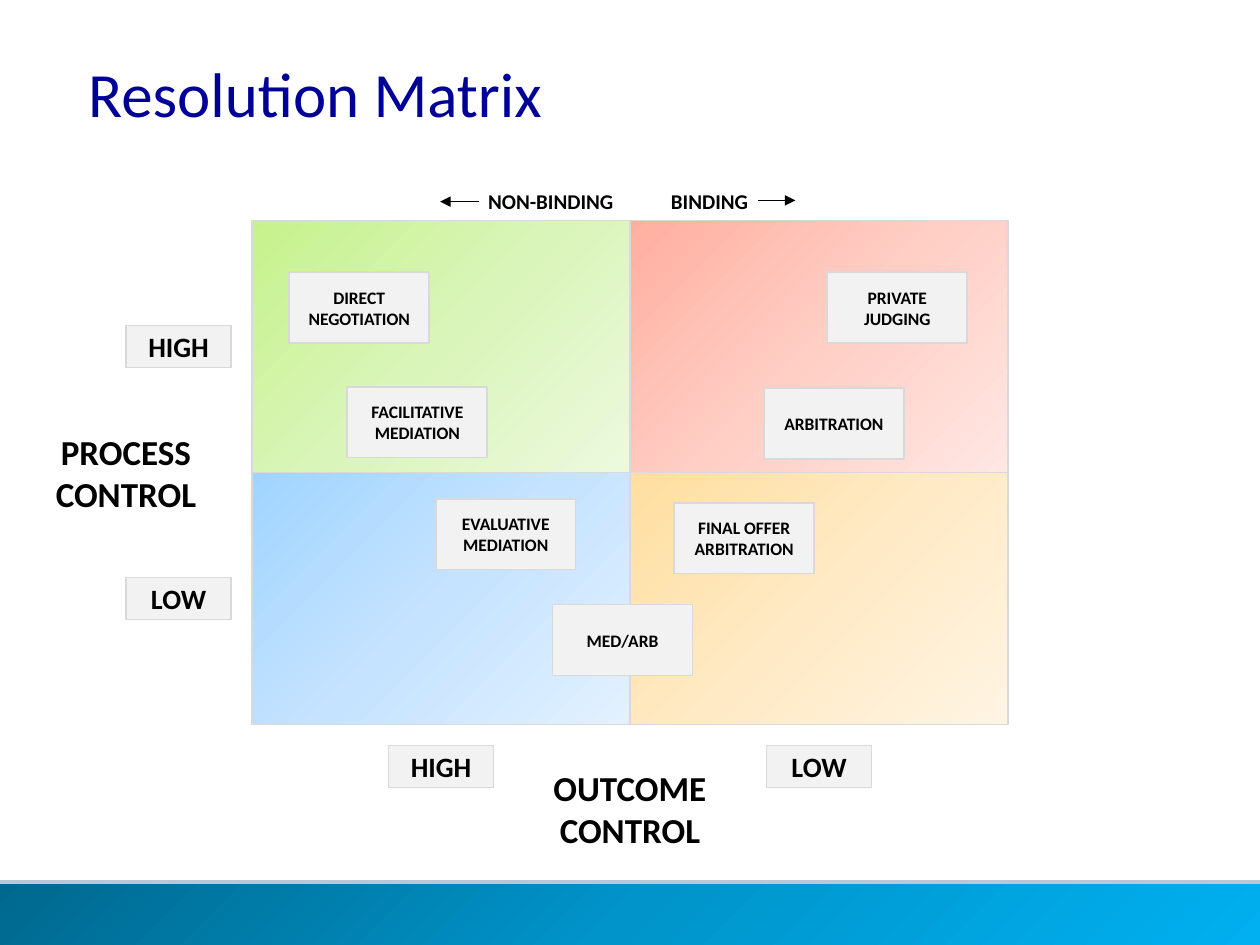
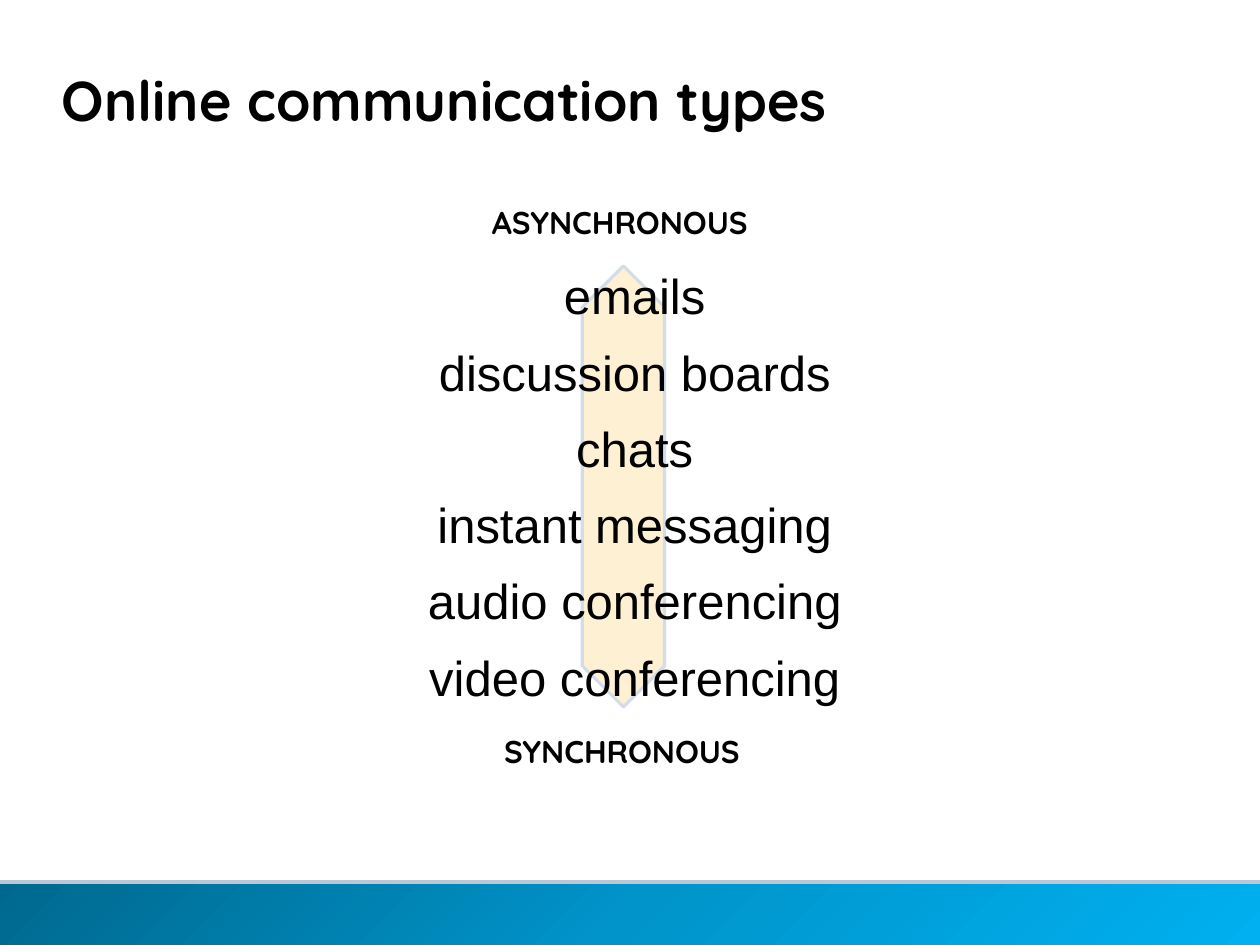
import copy

import pptx
import pptx.dml.color
import pptx.enum.dml
import pptx.enum.shapes
import pptx.enum.text
import pptx.oxml
import pptx.oxml.ns
import pptx.util

Pt = pptx.util.Pt
SHAPES = pptx.enum.shapes.MSO_SHAPE
ALIGN = pptx.enum.text.PP_ALIGN
ANCHOR = pptx.enum.text.MSO_ANCHOR
NO_FIT = pptx.enum.text.MSO_AUTO_SIZE.NONE
qn = pptx.oxml.ns.qn

WIDTH, HEIGHT = 720, 540
BAND_TOP = 504

COLORS = {
    "text": "000000", "title": "000099", "panel": "FFFFFF",
    "label": "F2F2F2", "border": "D9D9D9", "band_edge": "BAC7D7",
    "arrow": "FDBB33", "arrow_edge": "336699",
}
GRADIENTS = {
    "band": ("00688E", "0094CA", "00B0F0"),
    "green": ("C6F28C", "DAF5BA", "ECF9DE"),
    "red": ("FFAFA0", "FFCEC5", "FFE7E3"),
    "blue": ("A0D4FF", "C5E3FF", "E3F1FF"),
    "amber": ("FFDFA0", "FFEAC5", "FFF4E3"),
}


def rgb(name):
    return pptx.dml.color.RGBColor.from_string(COLORS.get(name, name))


def drawing_element(tag, **attributes):
    element = pptx.oxml.parse_xml(f"<a:{tag} {pptx.oxml.ns.nsdecls('a')}/>")
    for key, value in attributes.items():
        element.set(key, str(value))
    return element


def place(item, box):
    for side, value in zip(("left", "top", "width", "height"), box):
        setattr(item, side, Pt(value))


class Deck:
    """Holds the presentation, its shared style and the slide being drawn."""

    def __init__(self):
        self.show = pptx.Presentation()
        self.show.slide_width, self.show.slide_height = Pt(WIDTH), Pt(HEIGHT)
        self.slide = None

    def start(self, layout):
        """Add a slide with the shared footer band."""
        self.slide = self.show.slides.add_slide(self.show.slide_layouts.get_by_name(layout))
        self.shape((0, BAND_TOP, WIDTH, HEIGHT - BAND_TOP), gradient="band")
        self.line((0, BAND_TOP), (WIDTH, BAND_TOP), "band_edge", 2.25)

    def set_text(self, frame, text, size, font="Calibri", color="text", bold=True,
                 align=ALIGN.CENTER, anchor=ANCHOR.MIDDLE, gap=0, margins=(7.2, 3.6, 7.2, 3.6)):
        frame.text = text
        frame.word_wrap, frame.auto_size, frame.vertical_anchor = True, NO_FIT, anchor
        for side, value in zip(("left", "top", "right", "bottom"), margins):
            setattr(frame, f"margin_{side}", Pt(value))
        font_format = {"size": Pt(size), "name": font, "bold": bold}
        for paragraph in frame.paragraphs:
            paragraph.alignment = align
            paragraph.space_before = paragraph.space_after = Pt(gap)
            for run in paragraph.runs:
                for key, value in font_format.items():
                    setattr(run.font, key, value)
                run.font.color.rgb = rgb(color)

    def title(self, box, text, size, **style):
        heading = self.slide.shapes.title
        place(heading, box)
        self.set_text(heading.text_frame, text, size, align=ALIGN.LEFT, **style)

    def text(self, box, text, size, **style):
        caption = self.slide.shapes.add_textbox(*map(Pt, box))
        self.set_text(caption.text_frame, text, size, **style)

    def panel_list(self, box, items, size, opacity, **style):
        """Fill the body placeholder, unbulleted, as a translucent panel in front."""
        panel = self.slide.placeholders[1]
        place(panel, box)
        panel.fill.solid()
        panel.fill.fore_color.rgb = rgb("panel")
        color = panel._element.spPr.find(".//" + qn("a:srgbClr"))
        color.append(drawing_element("alpha", val=opacity * 1000))
        self.set_text(panel.text_frame, "\n".join(items), size, **style)
        for paragraph in panel.text_frame.paragraphs:
            properties = paragraph._p.get_or_add_pPr()
            properties.set("marL", "0")
            properties.set("indent", "0")
            properties.append(drawing_element("buNone"))
        self.slide.shapes._spTree.append(panel._element)

    def shape(self, box, kind=SHAPES.RECTANGLE, fill=None, gradient=None, edge=None, weight=1):
        figure = self.slide.shapes.add_shape(kind, *map(Pt, box))
        figure.shadow.inherit = False
        if gradient:
            figure.fill.gradient()
            figure.fill.gradient_angle = 315
            stops = figure._element.spPr.find(".//" + qn("a:gsLst"))
            stops.append(copy.deepcopy(stops[0]))
            for stop, color, position in zip(figure.fill.gradient_stops,
                                             GRADIENTS[gradient], (0, 0.5, 1)):
                stop.color.rgb, stop.position = rgb(color), position
        else:
            figure.fill.solid()
            figure.fill.fore_color.rgb = rgb(fill)
        if edge:
            figure.line.color.rgb, figure.line.width = rgb(edge), Pt(weight)
        else:
            figure.line.fill.background()
        return figure

    def label(self, box, text, size):
        tile = self.shape(box, fill="label", edge="border")
        self.set_text(tile.text_frame, text, size)

    def line(self, start, end, color, weight, arrow=False):
        stroke = self.slide.shapes.add_connector(
            pptx.enum.shapes.MSO_CONNECTOR.STRAIGHT, *map(Pt, (*start, *end)))
        stroke.line.color.rgb, stroke.line.width = rgb(color), Pt(weight)
        if arrow:
            stroke.line._get_or_add_ln().append(drawing_element("tailEnd", type="triangle"))
        stroke._element.spPr.append(drawing_element("effectLst"))


def resolution_matrix(deck):
    deck.start("Title Only")
    deck.title((43.2, 10.8, 600, 83.5), "Resolution Matrix", 36, color="title",
               bold=False, margins=(7.2, 0, 7.2, 0))

    left, top, cell_width, cell_height = 144, 126, 216, 144
    for column, row, gradient in ((0, 1, "blue"), (0, 0, "green"), (1, 1, "amber"), (1, 0, "red")):
        deck.shape((left + column * cell_width, top + row * cell_height, cell_width, cell_height),
                   gradient=gradient, edge="border")

    level_width, level_height = 60, 24
    for index, level in enumerate(("HIGH", "LOW")):
        process_top = top + index * cell_height + (cell_height - level_height) / 2
        outcome_left = left + index * cell_width + (cell_width - level_width) / 2
        deck.label((72, process_top, level_width, level_height), level, 16)
        deck.label((outcome_left, 426, level_width, level_height), level, 16)
    deck.text((288, 450, 144, 24), "OUTCOME CONTROL", 20)
    deck.text((0, 258, 144, 24), "PROCESS\vCONTROL", 20)

    methods = (
        ("FACILITATIVE MEDIATION", 198.5, 221),
        ("EVALUATIVE MEDIATION", 249, 285),
        ("MED/ARB", 315.75, 345.5),
        ("DIRECT\nNEGOTIATION", 165.25, 155.5),
        ("FINAL OFFER\nARBITRATION", 385.25, 287.25),
        ("ARBITRATION", 436.5, 221.75),
        ("PRIVATE\nJUDGING", 472.75, 155.5),
    )
    for method, x, y in methods:
        deck.label((x, y, 80, 40.5), method, 10)

    for effect, x, y, arrow_start, arrow_end in (
            ("BINDING", 333.5, 114.5, 433.25, 454.5),
            ("NON-BINDING", 242.75, 115.25, 273.5, 251.5)):
        deck.text((x, 103, 144, 24), effect, 12)
        deck.line((arrow_start, y), (arrow_end, y), "text", 0.75, arrow=True)


def communication_types(deck):
    quicksand = {"font": "Quicksand", "anchor": ANCHOR.TOP}
    deck.start("Title and Content")
    deck.title((28, 34, 551, 45.5), "Online communication types", 32, **quicksand)
    for timing, x, y in (("ASYNCHRONOUS", 274, 112.25), ("SYNCHRONOUS", 281, 415)):
        deck.text((x, y, 305, 29), timing, 18, align=ALIGN.LEFT, **quicksand)

    spectrum = deck.shape((332.75, 152, 47, 252), SHAPES.UP_DOWN_ARROW,
                          fill="arrow", edge="arrow_edge", weight=1.75)
    spectrum.adjustments[0], spectrum.adjustments[1] = 0.5, 1.07
    channels = ("emails", "discussion boards", "chats", "instant messaging",
                "audio conferencing", "video conferencing")
    deck.panel_list((152.75, 148.25, 412, 259.5), channels, 28, opacity=78, font="Arial",
                    bold=False, anchor=ANCHOR.TOP, gap=5, margins=(15, 3.6, 7.2, 3.6))


def main():
    deck = Deck()
    resolution_matrix(deck)
    communication_types(deck)
    deck.show.save("out.pptx")


if __name__ == "__main__":
    main()
